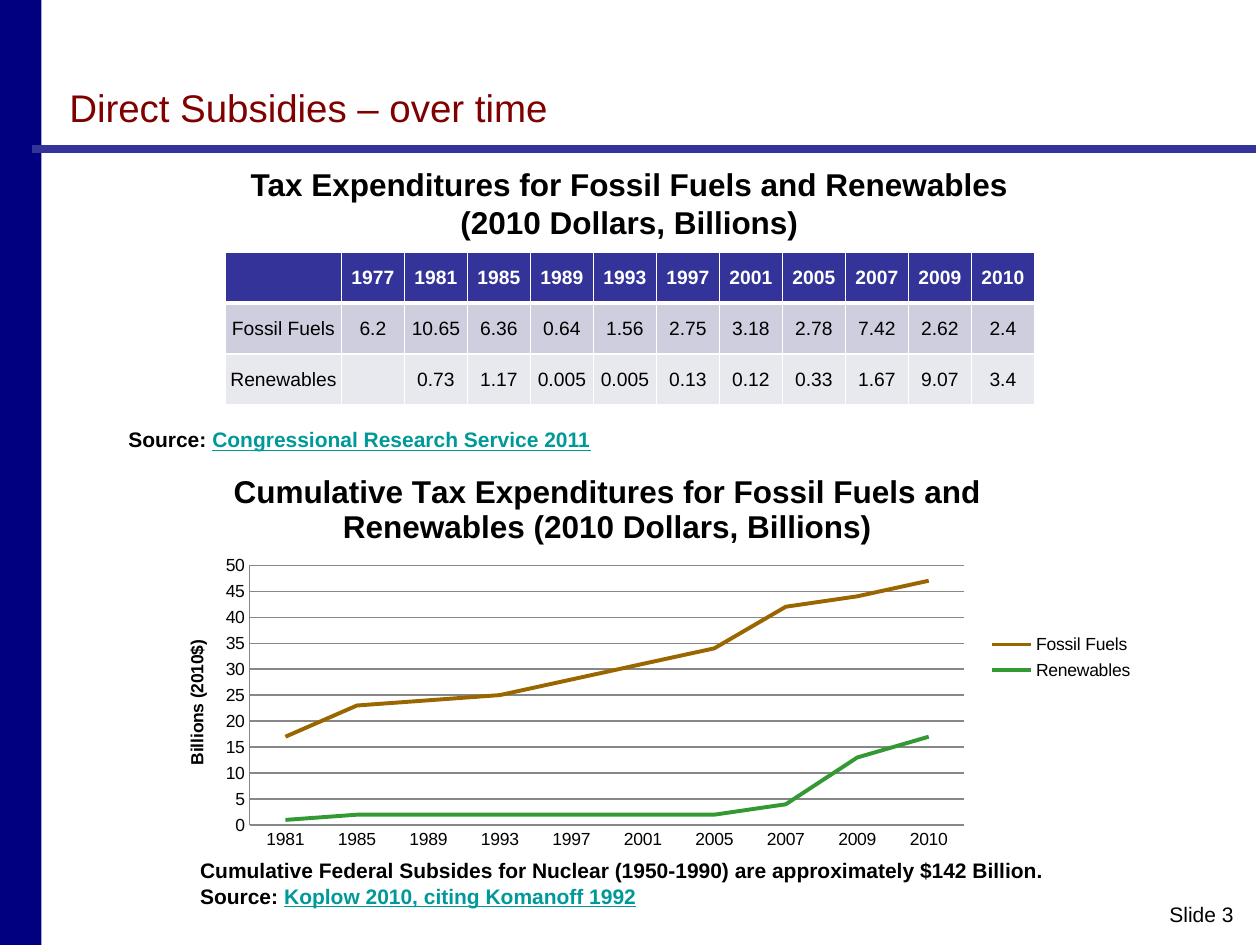
import pptx
import pptx.chart.data
import pptx.dml.color
import pptx.enum.chart
import pptx.enum.shapes
import pptx.enum.text
import pptx.oxml
import pptx.oxml.ns
import pptx.util

Inches, Pt = pptx.util.Inches, pptx.util.Pt
RGBColor = pptx.dml.color.RGBColor
PP_ALIGN = pptx.enum.text.PP_ALIGN
MSO_ANCHOR = pptx.enum.text.MSO_ANCHOR
qn = pptx.oxml.ns.qn

NAVY = RGBColor(0x00, 0x00, 0x80)
INDIGO = RGBColor(0x33, 0x33, 0x99)
MAROON = RGBColor(0x80, 0x00, 0x00)
TEAL = RGBColor(0x00, 0x99, 0x99)
BLACK = RGBColor(0x00, 0x00, 0x00)
WHITE = RGBColor(0xFF, 0xFF, 0xFF)
GREY = RGBColor(0x87, 0x87, 0x87)
BROWN = RGBColor(0x99, 0x66, 0x00)
GREEN = RGBColor(0x33, 0x99, 0x33)
ROW_FILLS = [INDIGO, RGBColor(0xCE, 0xCE, 0xDE), RGBColor(0xE8, 0xE8, 0xEF)]

YEARS = ["1977", "1981", "1985", "1989", "1993", "1997", "2001", "2005",
         "2007", "2009", "2010"]
TAX_ROWS = [
    [""] + YEARS,
    ["Fossil Fuels", "6.2", "10.65", "6.36", "0.64", "1.56", "2.75", "3.18",
     "2.78", "7.42", "2.62", "2.4"],
    ["Renewables", "", "0.73", "1.17", "0.005", "0.005", "0.13", "0.12",
     "0.33", "1.67", "9.07", "3.4"],
]
CUMULATIVE = [
    ("Fossil Fuels", [17, 23, 24, 25, 28, 31, 34, 42, 44, 47], BROWN),
    ("Renewables", [1, 2, 2, 2, 2, 2, 2, 4, 13, 17], GREEN),
]


def set_layout(element, index, x, y, w=None, h=None, inner=False):
    """Place a chart part by fractions of the chart area."""
    for old in element.findall(qn("c:layout")):
        element.remove(old)
    parts = '<c:layoutTarget val="inner"/>' if inner else ""
    parts += '<c:xMode val="edge"/><c:yMode val="edge"/>'
    for tag, value in zip("xywh", (x, y, w, h)):
        if value is not None:
            parts += f'<c:{tag} val="{value}"/>'
    element.insert(index, pptx.oxml.parse_xml(
        f'<c:layout {pptx.oxml.ns.nsdecls("c")}><c:manualLayout>{parts}'
        '</c:manualLayout></c:layout>'))


def set_borders(cell, bottom):
    """Draw white cell borders with the given bottom width in points."""
    tcPr = cell._tc.get_or_add_tcPr()
    for i, (side, width) in enumerate(
            [("lnL", 1), ("lnR", 1), ("lnT", 1), ("lnB", bottom)]):
        tcPr.insert(i, pptx.oxml.parse_xml(
            f'<a:{side} {pptx.oxml.ns.nsdecls("a")} w="{Pt(width)}"><a:solidFill>'
            f'<a:srgbClr val="{WHITE}"/></a:solidFill></a:{side}>'))


class SlideBuilder:
    font = "Arial"

    def __init__(self, slide):
        self.slide = slide

    def style(self, font, size, color, bold=False):
        font.name, font.size, font.bold = self.font, Pt(size), bold
        font.color.rgb = color

    def title(self, text, x, y, w, h):
        sp = self.slide.shapes.title
        sp.left, sp.top, sp.width, sp.height = map(Inches, (x, y, w, h))
        tf = sp.text_frame
        tf.text = text
        tf.vertical_anchor = MSO_ANCHOR.BOTTOM
        p = tf.paragraphs[0]
        p.alignment = PP_ALIGN.LEFT
        self.style(p.runs[0].font, 22, MAROON)

    def bar(self, x, y, w, h, color):
        sp = self.slide.shapes.add_shape(
            pptx.enum.shapes.MSO_SHAPE.RECTANGLE, *map(Inches, (x, y, w, h)))
        sp.shadow.inherit = False
        sp.fill.solid()
        sp.fill.fore_color.rgb = color
        sp.line.fill.background()

    def rule(self, x1, y1, x2, y2, color, width):
        line = self.slide.shapes.add_connector(
            pptx.enum.shapes.MSO_CONNECTOR.STRAIGHT, *map(Inches, (x1, y1, x2, y2)))
        line.line.color.rgb = color
        line.line.width = Pt(width)
        spPr = line._element.spPr
        spPr.append(spPr.makeelement(qn("a:effectLst"), {}))

    def text(self, text, x, y, w, h, size=12, bold=True, align=PP_ALIGN.LEFT,
             inset=None, citation=None):
        sp = self.slide.shapes.add_textbox(*map(Inches, (x, y, w, h)))
        tf = sp.text_frame
        tf.word_wrap = True
        if inset is not None:
            tf.margin_left = tf.margin_right = Inches(inset)
            tf.margin_top = tf.margin_bottom = Inches(inset)
        p = tf.paragraphs[0]
        p.text = text
        p.alignment = align
        self.style(p.runs[0].font, size, BLACK, bold)
        if citation:
            r = p.add_run()
            r.text = citation
            self.style(r.font, size, TEAL, bold)
            r.font.underline = True

    def table(self, rows, x, y, widths, row_height):
        frame = self.slide.shapes.add_table(
            len(rows), len(widths), Inches(x), Inches(y),
            Inches(sum(widths)), Inches(row_height * len(rows)))
        table = frame.table
        for column, width in zip(table.columns, widths):
            column.width = Inches(width)
        for i, row in enumerate(rows):
            header = i == 0
            for j, value in enumerate(row):
                cell = table.cell(i, j)
                cell.fill.solid()
                cell.fill.fore_color.rgb = ROW_FILLS[i]
                cell.margin_left = cell.margin_right = 0
                cell.margin_top = cell.margin_bottom = 0
                cell.vertical_anchor = MSO_ANCHOR.MIDDLE
                set_borders(cell, 3 if header else 1)
                p = cell.text_frame.paragraphs[0]
                p.text = value
                p.alignment = PP_ALIGN.CENTER
                self.style(p.font, 11, WHITE if header else BLACK, header)
                for r in p.runs:
                    self.style(r.font, 11, WHITE if header else BLACK, header)

    def line_chart(self, title, axis_title, categories, series, x, y, w, h):
        data = pptx.chart.data.CategoryChartData()
        data.categories = categories
        for name, values, _ in series:
            data.add_series(name, values)
        chart = self.slide.shapes.add_chart(
            pptx.enum.chart.XL_CHART_TYPE.LINE, *map(Inches, (x, y, w, h)), data).chart
        self.style(chart.font, 10, BLACK)

        # Chart and axis titles
        chart.has_title = True
        value_axis, category_axis = chart.value_axis, chart.category_axis
        value_axis.has_title = True
        for part, text, size, left, top in (
                (chart.chart_title, title, 18, 0.076, 0.04),
                (value_axis.axis_title, axis_title, 10, 0.03, 0.46)):
            part.text_frame.text = text
            self.style(part.text_frame.paragraphs[0].runs[0].font, size, BLACK, True)
            set_layout(part._element, 1, left, top)

        # Axes and gridlines
        value_axis.minimum_scale, value_axis.maximum_scale = 0, 50
        value_axis.major_unit = 5
        for axis in (value_axis, category_axis):
            axis.major_tick_mark = pptx.enum.chart.XL_TICK_MARK.NONE
            axis.format.line.color.rgb = GREY
        value_axis.has_major_gridlines = True
        value_axis.major_gridlines.format.line.color.rgb = GREY

        # Series, legend and plot area
        chart.plots[0].vary_by_categories = False
        for line, (_, _, color) in zip(chart.series, series):
            line.smooth = False
            line.marker.style = pptx.enum.chart.XL_MARKER_STYLE.NONE
            line.format.line.color.rgb = color
            line.format.line.width = Pt(2.25)
        chart.has_legend = True
        chart.legend.position = pptx.enum.chart.XL_LEGEND_POSITION.RIGHT
        chart.legend.include_in_layout = False
        set_layout(chart.legend._element, 1, 0.84, 0.44, 0.15, 0.14)
        set_layout(chart._chartSpace.chart.plotArea, 0, 0.098, 0.285, 0.72, 0.635,
                   inner=True)


def main():
    prs = pptx.Presentation()
    prs.slide_width, prs.slide_height = Inches(10), Inches(7.5)
    s = SlideBuilder(prs.slides.add_slide(prs.slide_layouts[5]))

    # Frame and title
    s.bar(0, 0, 0.33, 7.5, NAVY)
    s.rule(0.25, 1.18, 9.97, 1.18, INDIGO, 4.5)
    s.text("Slide 3", 5.77, 7.11, 4.07, 0.3, bold=False, align=PP_ALIGN.RIGHT,
           inset=0.05)
    s.title("Direct Subsidies – over time", 0.45, 0.18, 9.16, 0.9)

    # Yearly tax expenditures
    s.table(TAX_ROWS, 1.79, 2, [0.92] + [0.5] * len(YEARS), 0.405)

    # Cumulative tax expenditures
    s.line_chart("Cumulative Tax Expenditures for Fossil Fuels and Renewables "
                 "(2010 Dollars, Billions)", "Billions (2010$)", YEARS[1:],
                 CUMULATIVE, 1.21, 3.56, 7.88, 3.25)

    # Table heading and sources
    s.text("Tax Expenditures for Fossil Fuels and Renewables (2010 Dollars, Billions)",
           1.83, 1.26, 6.33, 0.71, size=18, align=PP_ALIGN.CENTER)
    s.text("Cumulative Federal Subsides for Nuclear (1950-1990) are approximately "
           "$142 Billion. Source: ", 1.49, 6.76, 6.96, 0.5,
           citation="Koplow 2010, citing Komanoff 1992")
    s.text("Source: ", 0.92, 3.34, 4.07, 0.3,
           citation="Congressional Research Service 2011")

    prs.save("out.pptx")


if __name__ == "__main__":
    main()
